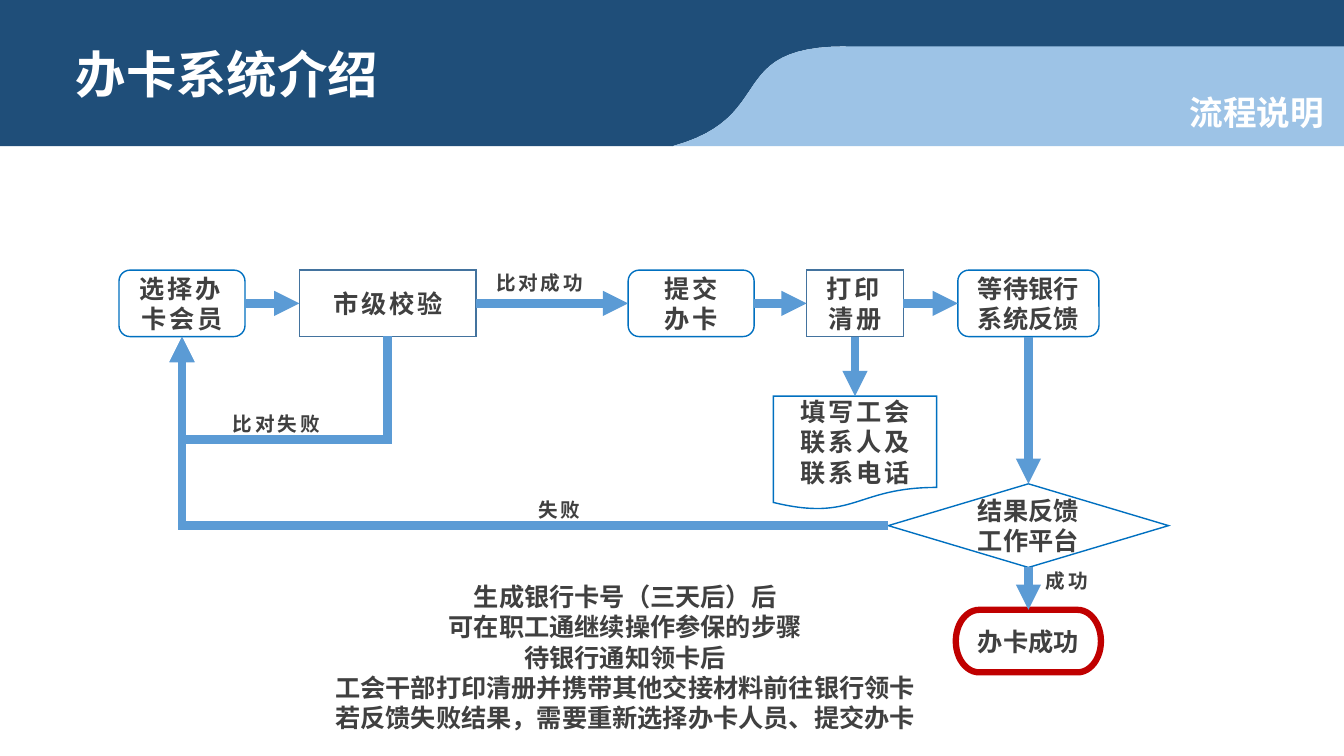
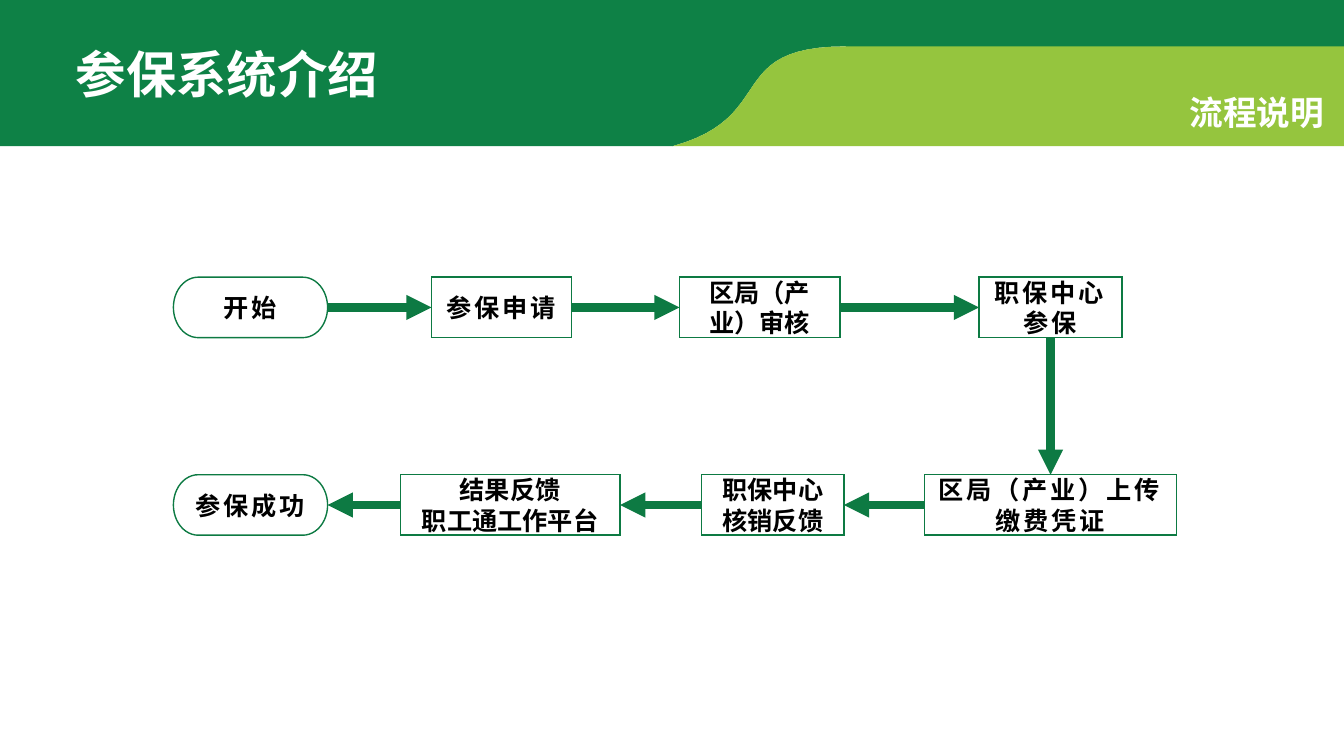
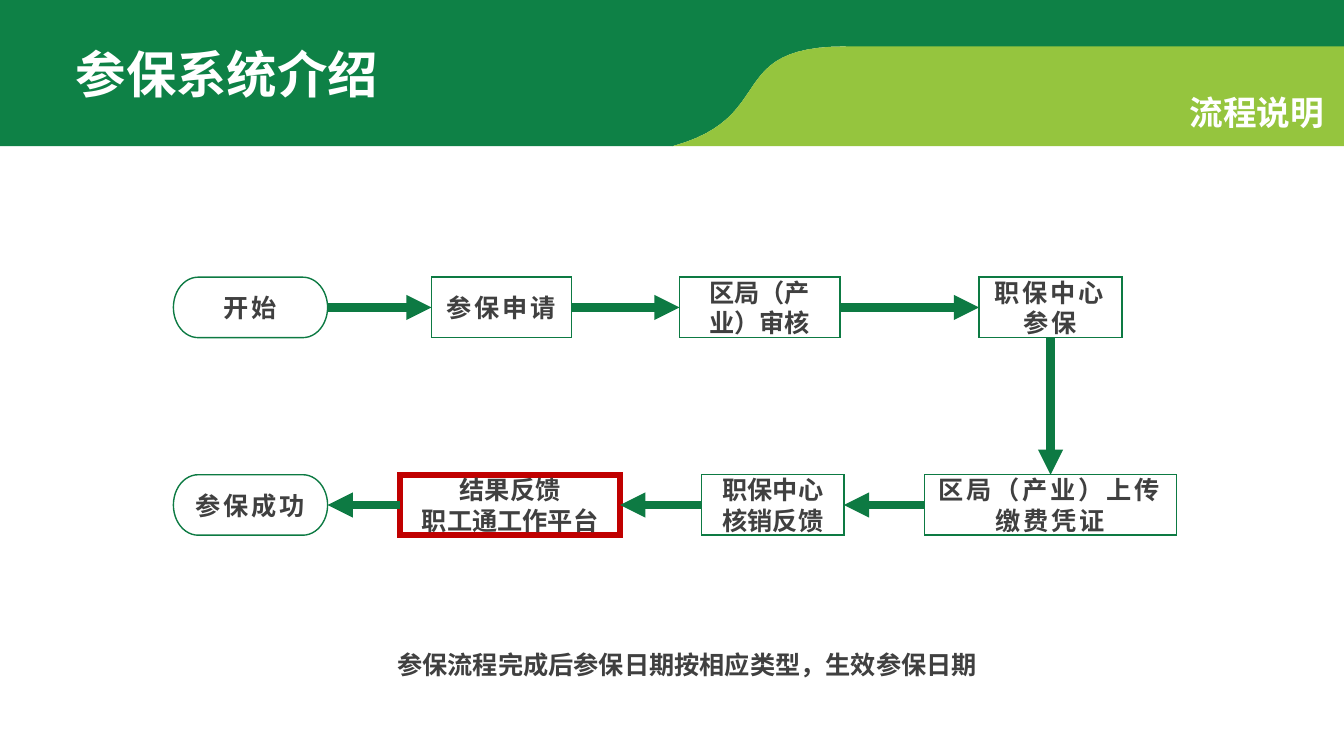
"""Build three process slides: card issuing and insurance enrolment."""
from lxml import etree
from pptx import Presentation
from pptx.dml.color import RGBColor
from pptx.enum.shapes import MSO_CONNECTOR, MSO_SHAPE
from pptx.enum.text import MSO_ANCHOR, MSO_AUTO_SIZE, PP_ALIGN
from pptx.oxml.ns import qn
from pptx.util import Inches, Pt

RECTANGLE = MSO_SHAPE.RECTANGLE
ROUNDED = MSO_SHAPE.ROUNDED_RECTANGLE
TERMINATOR = MSO_SHAPE.FLOWCHART_TERMINATOR
DECISION = MSO_SHAPE.FLOWCHART_DECISION
DOCUMENT = MSO_SHAPE.FLOWCHART_DOCUMENT
STRAIGHT, ELBOW = MSO_CONNECTOR.STRAIGHT, MSO_CONNECTOR.ELBOW
LEFT, CENTER, RIGHT = PP_ALIGN.LEFT, PP_ALIGN.CENTER, PP_ALIGN.RIGHT
MIDDLE, TOP_ANCHOR = MSO_ANCHOR.MIDDLE, MSO_ANCHOR.TOP
NO_AUTOSIZE = MSO_AUTO_SIZE.NONE
TOP, LEFT_SIDE, BOTTOM, RIGHT_SIDE = range(4)

WHITE, GREY, BLACK, RED = "FFFFFF", "404040", "000000", "C00000"
HEADING_FONT, BODY_FONT = "Arial", "Noto Sans CJK SC"
BLUE = {"dark": "1F4E79", "light": "9DC3E6", "box": "43739E", "rounded": "0070C0", "arrow": "5B9BD5"}
GREEN = {"dark": "0E8146", "light": "95C53E", "box": "0D7A43", "rounded": "0D7A43", "arrow": "0D7A43"}
rgb = RGBColor.from_string


def write(shape, lines, size, color, align=CENTER, spacing=0, font_name=BODY_FONT, anchor=MIDDLE):
    """Fill a shape with bold lines of text, one paragraph each."""
    frame = shape.text_frame
    frame.text = lines
    frame.word_wrap = True
    frame.auto_size = NO_AUTOSIZE
    frame.vertical_anchor = anchor
    for paragraph in frame.paragraphs:
        paragraph.alignment = align
        paragraph.line_spacing = Pt(round(size * 1.2, 1))
        font = paragraph.font
        font.name, font.size, font.bold = font_name, Pt(size), True
        font.color.rgb = rgb(color)
        font._rPr.set("spc", str(spacing * 100))
        etree.SubElement(font._rPr, qn("a:ea"), typeface=BODY_FONT)


def join(slide, start, start_side, end, end_side, color, kind=STRAIGHT):
    """Draw an arrow from one node's side to another's."""
    arrow = slide.shapes.add_connector(kind, 0, 0, 0, 0)
    arrow.begin_connect(start, start_side)
    arrow.end_connect(end, end_side)
    arrow.line.color.rgb = rgb(color)
    arrow.line.width = Pt(6)
    outline = arrow.line._get_or_add_ln()
    etree.SubElement(outline, qn("a:miter"), lim="800000")
    etree.SubElement(outline, qn("a:tailEnd"), type="triangle")
    etree.SubElement(arrow._element.spPr, qn("a:effectLst"))
    return arrow


card_nodes = {
    "select": (ROUNDED, 1.18, 2.68, 1.25, 0.66, "选择办卡会员", 2),
    "check": (RECTANGLE, 2.97, 2.68, 1.75, 0.66, "市级校验", 2),
    "submit": (ROUNDED, 6.23, 2.68, 1.25, 0.66, "提交\n办卡", 2),
    "print": (RECTANGLE, 8, 2.68, 0.96, 0.66, "打印清册", 2),
    "wait": (ROUNDED, 9.5, 2.68, 1.4, 0.66, "等待银行系统反馈", 0),
    "contact": (DOCUMENT, 7.67, 3.93, 1.62, 1.13, "填写工会\n联系人及\n联系电话", 2),
    "result": (DECISION, 8.81, 4.8, 2.78, 0.83, "结果反馈工作平台", 0),
    "done": (TERMINATOR, 9.48, 6.05, 1.44, 0.62, "办卡成功", 0),
}
card_links = [
    ("select", RIGHT_SIDE, "check", LEFT_SIDE),
    ("check", RIGHT_SIDE, "submit", LEFT_SIDE),
    ("submit", RIGHT_SIDE, "print", LEFT_SIDE),
    ("print", RIGHT_SIDE, "wait", LEFT_SIDE),
    ("print", BOTTOM, "contact", TOP),
    ("wait", BOTTOM, "result", TOP),
    ("result", BOTTOM, "done", TOP),
]
card_labels = [
    (4.92, 2.69, 1.06, "比对成功"),
    (2.31, 4.09, 1.06, "比对失败"),
    (5.34, 4.94, 0.5, "失败"),
    (10.37, 5.64, 0.51, "成功"),
]
card_note = (1.5, 5.72, 9.4, 1.61, (
    "生成银行卡号（三天后）后\n可在职工通继续操作参保的步骤\n待银行通知领卡后\n"
    "工会干部打印清册并携带其他交接材料前往银行领卡\n"
    "若反馈失败结果，需要重新选择办卡人员、提交办卡"))

cover_nodes = {
    "start": (TERMINATOR, 1.72, 2.75, 1.53, 0.6, "开始", 2),
    "apply": (RECTANGLE, 4.28, 2.75, 1.39, 0.6, "参保申请", 2),
    "review": (RECTANGLE, 6.74, 2.75, 1.59, 0.6, "区局（产业）审核", 0),
    "enrol": (RECTANGLE, 9.71, 2.75, 1.42, 0.6, "职保中心参保", 2),
    "upload": (RECTANGLE, 9.17, 4.71, 2.5, 0.6, "区局（产业）上传缴费凭证", 2),
    "verify": (RECTANGLE, 6.96, 4.71, 1.41, 0.6, "职保中心核销反馈", 0),
    "result": (RECTANGLE, 3.97, 4.71, 2.18, 0.6, "结果反馈\n职工通工作平台", 0),
    "done": (TERMINATOR, 1.72, 4.71, 1.53, 0.6, "参保成功", 2),
}
cover_links = [
    ("start", RIGHT_SIDE, "apply", LEFT_SIDE),
    ("apply", RIGHT_SIDE, "review", LEFT_SIDE),
    ("review", RIGHT_SIDE, "enrol", LEFT_SIDE),
    ("enrol", BOTTOM, "upload", TOP),
    ("upload", LEFT_SIDE, "verify", RIGHT_SIDE),
    ("verify", LEFT_SIDE, "result", RIGHT_SIDE),
    ("result", LEFT_SIDE, "done", RIGHT_SIDE),
]
cover_note = (3.63, 6.39, 6.37, 0.4, "参保流程完成后参保日期按相应类型，生效参保日期")

pages = [
    ("办卡系统介绍", BLUE, GREY, card_nodes, card_links, "done", card_labels, card_note),
    ("参保系统介绍", GREEN, BLACK, cover_nodes, cover_links, None, [], None),
    ("参保系统介绍", GREEN, GREY, cover_nodes, cover_links, "result", [], cover_note),
]

curve = []
for step in range(25):
    t = step / 24
    weights = ((1 - t) ** 3, 3 * t * (1 - t) ** 2, 3 * t * t * (1 - t), t ** 3)
    curve.append(tuple(sum(weight * value for weight, value in zip(weights, values))
                       for values in ((6.67, 7.73, 7.17, 8.39), (1.45, 1.16, 0.46, 0.46))))
bands = [
    ("dark", [(0, 0), (13.33, 0), (13.33, 0.5), (8.39, 0.5)] + curve[::-1] + [(0, 1.45)]),
    ("light", curve + [(13.33, 0.46), (13.33, 1.45)]),
]

presentation = Presentation()
presentation.slide_width, presentation.slide_height = Inches(13.33), Inches(7.5)
title_only = presentation.slide_layouts[5]

for title_text, theme, text_color, nodes, links, highlighted, labels, note in pages:
    slide = presentation.slides.add_slide(title_only)

    for tone, outline_points in bands:
        points = [(Inches(x), Inches(y)) for x, y in outline_points]
        builder = slide.shapes.build_freeform(*points[0])
        builder.add_line_segments(points[1:], close=True)
        band = builder.convert_to_shape()
        band.shadow.inherit = False
        band.fill.solid()
        band.fill.fore_color.rgb = rgb(theme[tone])
        band.line.fill.background()

    title = slide.shapes.title
    title.left, title.top, title.width, title.height = Inches(0.65), Inches(0.37), Inches(5), Inches(0.71)
    write(title, title_text, 36, WHITE, LEFT, font_name=HEADING_FONT)
    slide.shapes._spTree.append(title._element)
    section = slide.shapes.add_textbox(Inches(10.23), Inches(0.86), Inches(3), Inches(0.5))
    write(section, "流程说明", 24, WHITE, RIGHT, font_name=HEADING_FONT)

    placed = {}
    for name, (kind, left, top, width, height, text, spacing) in nodes.items():
        node = slide.shapes.add_shape(kind, Inches(left), Inches(top), Inches(width), Inches(height))
        node.shadow.inherit = False
        node.fill.background()
        line_color = theme["box" if kind == RECTANGLE else "rounded"]
        node.line.color.rgb = rgb(RED if name == highlighted else line_color)
        node.line.width = Pt(4.5 if name == highlighted else 1)
        etree.SubElement(node.line._get_or_add_ln(), qn("a:miter"), lim="800000")
        write(node, text, 18, text_color, spacing=spacing)
        placed[name] = node

    for start, start_side, end, end_side in links:
        join(slide, placed[start], start_side, placed[end], end_side, theme["arrow"])

    if "select" in placed:
        failure = join(slide, placed["result"], LEFT_SIDE, placed["select"], BOTTOM, theme["arrow"], ELBOW)
        failure._element.spPr.prstGeom.set("prst", "bentConnector2")

        mismatch = join(slide, placed["check"], BOTTOM, placed["select"], BOTTOM, theme["arrow"], ELBOW)
        mismatch.left, mismatch.top, mismatch.width, mismatch.height = (
            Inches(2.82), Inches(2.32), Inches(0.01), Inches(2.04))
        transform = mismatch._element.spPr.xfrm
        transform.set("rot", str(90 * 60000))
        for flip in ("flipH", "flipV"):
            transform.attrib.pop(flip, None)
        adjustments = mismatch._element.spPr.prstGeom.get_or_add_avLst()
        etree.SubElement(adjustments, qn("a:gd"), name="adj1", fmla="val 10400000")

    for left, top, width, text in labels:
        label = slide.shapes.add_textbox(Inches(left), Inches(top), Inches(width), Inches(0.24))
        frame = label.text_frame
        frame.margin_left = frame.margin_top = frame.margin_right = frame.margin_bottom = 0
        write(label, text, 14, GREY, LEFT, spacing=2, anchor=TOP_ANCHOR)

    if note:
        *box, text = note
        remark = slide.shapes.add_textbox(*map(Inches, box))
        write(remark, text, 18, GREY, anchor=TOP_ANCHOR)

presentation.save("out.pptx")
